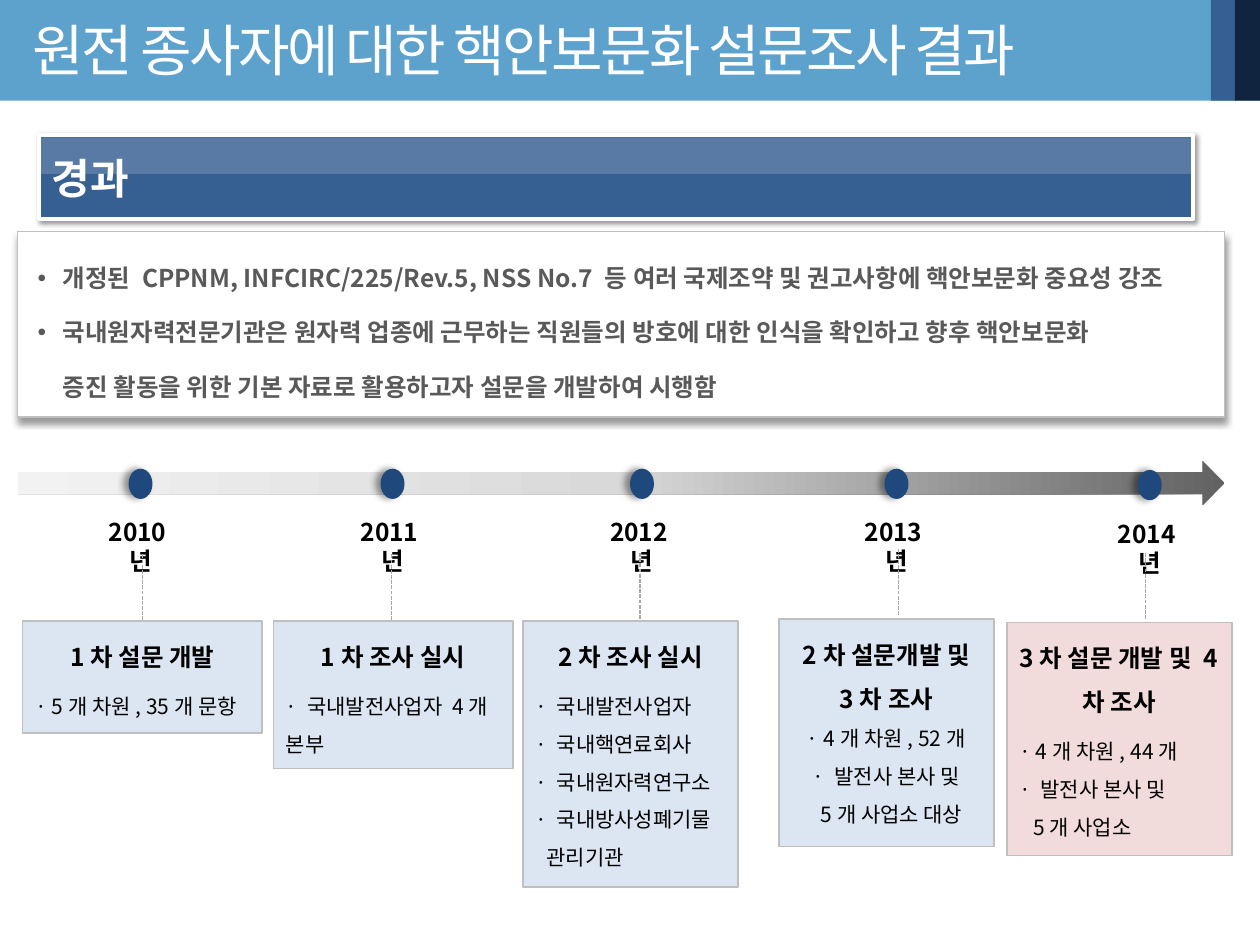
from lxml.etree import SubElement
from pptx import Presentation
from pptx.dml.color import RGBColor
from pptx.enum.dml import MSO_LINE
from pptx.enum.shapes import MSO_CONNECTOR, MSO_SHAPE
from pptx.enum.text import MSO_ANCHOR, PP_ALIGN
from pptx.oxml.ns import qn
from pptx.util import Inches, Pt

FONT = "Noto Sans CJK KR"
LEFT, MID = PP_ALIGN.LEFT, PP_ALIGN.CENTER


def color(code):
    return RGBColor.from_string(code)


def node(root, tag, **attrs):
    return SubElement(root, qn(tag), {k: str(v) for k, v in attrs.items()})


def tint(root, code, alpha=None):
    item = node(root, "a:srgbClr", val=code)
    if alpha:
        node(item, "a:alpha", val=alpha * 1000)


def shade(shape, blur, dist, angle):
    root = shape._element.spPr.find(qn("a:effectLst"))
    item = node(root, "a:outerShdw", blurRad=Pt(blur), dist=Pt(dist),
                dir=angle * 60000, algn="ctr", rotWithShape=0)
    tint(item, "000000", 40)


def block(slide, box, fill=None, line=None, width=1, kind=MSO_SHAPE.RECTANGLE):
    shape = slide.shapes.add_shape(kind, *map(Inches, box))
    shape.shadow.inherit = False
    if fill:
        shape.fill.solid()
        shape.fill.fore_color.rgb = color(fill)
    if line:
        shape.line.color.rgb = color(line)
        shape.line.width = Pt(width)
    else:
        shape.line.fill.background()
    return shape


def frame(shape, anchor=MSO_ANCHOR.TOP):
    text = shape.text_frame
    text.word_wrap = True
    text.vertical_anchor = anchor
    return text


def field(slide, box):
    return frame(slide.shapes.add_textbox(*map(Inches, box)))


def write(text, words, size, pitch, code="000000", bold=False, align=LEFT,
          first=False, before=0, after=0, indent=0, hang=0, track=0):
    para = text.paragraphs[0] if first else text.add_paragraph()
    para.alignment = align
    para.line_spacing = Pt(pitch)
    para.space_before, para.space_after = Pt(before), Pt(after)
    props = para._p.get_or_add_pPr()
    props.set("marL", str(Inches(indent)))
    props.set("indent", str(-Inches(hang)))
    if hang:
        node(props, "a:buFont", typeface="Arial")
        node(props, "a:buChar", char="•")
    run = para.add_run()
    run.text = words
    font = run.font
    font.size, font.bold, font.name = Pt(size), bold, FONT
    font.color.rgb = color(code)
    root = run._r.get_or_add_rPr()
    node(root, "a:ea", typeface=FONT)
    if track:
        root.set("spc", str(track))


def header(slide, x, y, w, h):
    block(slide, (x, y, w, h), "5DA2CD")
    for back, code in ((0.39, "376092"), (0.2, "0F243E")):
        block(slide, (x + w - back, y, 0.2, h), code)
    text = field(slide, (x + 0.16, y + 0.08, 9, 0.81))
    write(text, "원전 종사자에 대한 핵안보문화 설문조사 결과", 32, 38,
          "FFFFFF", first=True, track=-150)


def banner(slide, x, y, w, h):
    bar = block(slide, (x, y, w, h), "376092", "FFFFFF", 2.25)
    shade(bar, 3, 1, 45)
    write(frame(bar, MSO_ANCHOR.MIDDLE), "경과", 24, 29, "FFFFFF", True, first=True)
    gloss = block(slide, (x, y + 0.02, w, 0.29), "FFFFFF")
    node(gloss._element.spPr.find(".//" + qn("a:srgbClr")), "a:alpha", val=17000)


def summary(slide, x, y, w, h):
    shade(block(slide, (x, y, w, h), "FFFFFF", "BFBFBF", 0.75), 4, 3, 90)
    text = field(slide, (x + 0.06, y + 0.08, 10.02, 1.92))
    lines = (
        ("개정된 CPPNM, INFCIRC/225/Rev.5, NSS No.7 등 여러 국제조약 및 권고사항에 핵안보문화 중요성 강조", 0.2),
        ("국내원자력전문기관은 원자력 업종에 근무하는 직원들의 방호에 대한 인식을 확인하고 향후 핵안보문화", 0.2),
        ("증진 활동을 위한 기본 자료로 활용하고자 설문을 개발하여 시행함", 0),
    )
    for i, (words, hang) in enumerate(lines):
        write(text, words, 14, 25.2, "595959", True, first=i == 0,
              before=2, after=4, indent=0.2, hang=hang)


def arrow(slide, x, y, w, h):
    shape = block(slide, (x, y, w, h), kind=MSO_SHAPE.RIGHT_ARROW)
    root = shape._element.spPr
    grad = node(root, "a:gradFill", rotWithShape=1)
    root.find(qn("a:prstGeom")).addnext(grad)
    stops = node(grad, "a:gsLst")
    for pos, code in ((0, "626262"), (50, "D9D9D9"), (100, "F2F2F2")):
        tint(node(stops, "a:gs", pos=pos * 1000), code)
    node(grad, "a:lin", ang=180 * 60000, scaled=0)


def marker(slide, x, y, year):
    dot = block(slide, (x, y, 0.19, 0.24), "1F497D", kind=MSO_SHAPE.OVAL)
    shade(dot, 4, 3, 180)
    text = field(slide, (x - 0.33, y + 0.34, 0.85, 0.34))
    text.margin_left = text.margin_right = Inches(0.15)
    write(text, f"{year}년", 14, 16.6, bold=True, align=MID, first=True)


def link(slide, x, y):
    line = slide.shapes.add_connector(
        MSO_CONNECTOR.STRAIGHT, *map(Inches, (x, y, x, y + 0.53)))
    line.line.color.rgb = color("A6A6A6")
    line.line.width = Pt(0.75)
    line.line.dash_style = MSO_LINE.SQUARE_DOT
    node(line._element.spPr, "a:effectLst")


def card(slide, box, fill, title, items, align=LEFT, gap=5.4, inset=0):
    text = frame(block(slide, box, fill, "BFBFBF"))
    write(text, title, 14, 25.2, bold=True, align=MID, first=True)
    for i, words in enumerate(items):
        write(text, words, 12, 21.6, align=align, before=0 if i else gap,
              indent=0 if words.startswith("·") else inset)


def timeline(slide, x, y, w, h):
    arrow(slide, x, y, w, h)
    blue, pink = "DCE6F2", "F2DCDB"
    stages = (
        (0.88, 0.06, 0.99, 0.74, (0.04, 1.27, 1.9, 0.89), blue, "1차 설문 개발",
         ("· 5개 차원, 35개 문항",), {}),
        (2.88, 0.06, 2.97, 0.74, (2.03, 1.27, 1.9, 1.17), blue, "1차 조사 실시",
         ("· 국내발전사업자 4개 본부",), {}),
        (4.86, 0.06, 4.94, 0.73, (4.01, 1.27, 1.71, 2.11), blue, "2차 조사 실시",
         ("· 국내발전사업자", "· 국내핵연료회사", "· 국내원자력연구소",
          "· 국내방사성폐기물", "관리기관"), {"inset": 0.09}),
        (6.88, 0.06, 6.99, 0.7, (6.04, 1.25, 1.71, 1.81), blue, "2차 설문개발 및 3차 조사",
         ("· 4개 차원, 52개", "· 발전사 본사 및", "5개 사업소 대상"),
         {"align": MID, "gap": 0, "inset": 0.08}),
        (8.89, 0.07, 8.95, 0.73, (7.85, 1.28, 1.79, 1.85), pink, "3차 설문 개발 및 4차 조사",
         ("· 4개 차원, 44개", "· 발전사 본사 및", "5개 사업소"), {"inset": 0.11}),
    )
    for i, (dot, drop, stem, top, box, fill, title, items, style) in enumerate(stages):
        marker(slide, x + dot, y + drop, 2010 + i)
        card(slide, (x + box[0], y + box[1], *box[2:]), fill, title, items, **style)
        link(slide, x + stem, y + top)


def main():
    deck = Presentation()
    deck.slide_width, deck.slide_height = Inches(10), Inches(7.5)
    slide = deck.slides.add_slide(deck.slide_layouts[6])
    header(slide, 0, 0, 10, 0.8)
    banner(slide, 0.31, 1.07, 9.16, 0.67)
    summary(slide, 0.14, 1.84, 9.58, 1.47)
    timeline(slide, 0.14, 3.66, 9.58, 0.35)
    deck.save("out.pptx")


if __name__ == "__main__":
    main()
